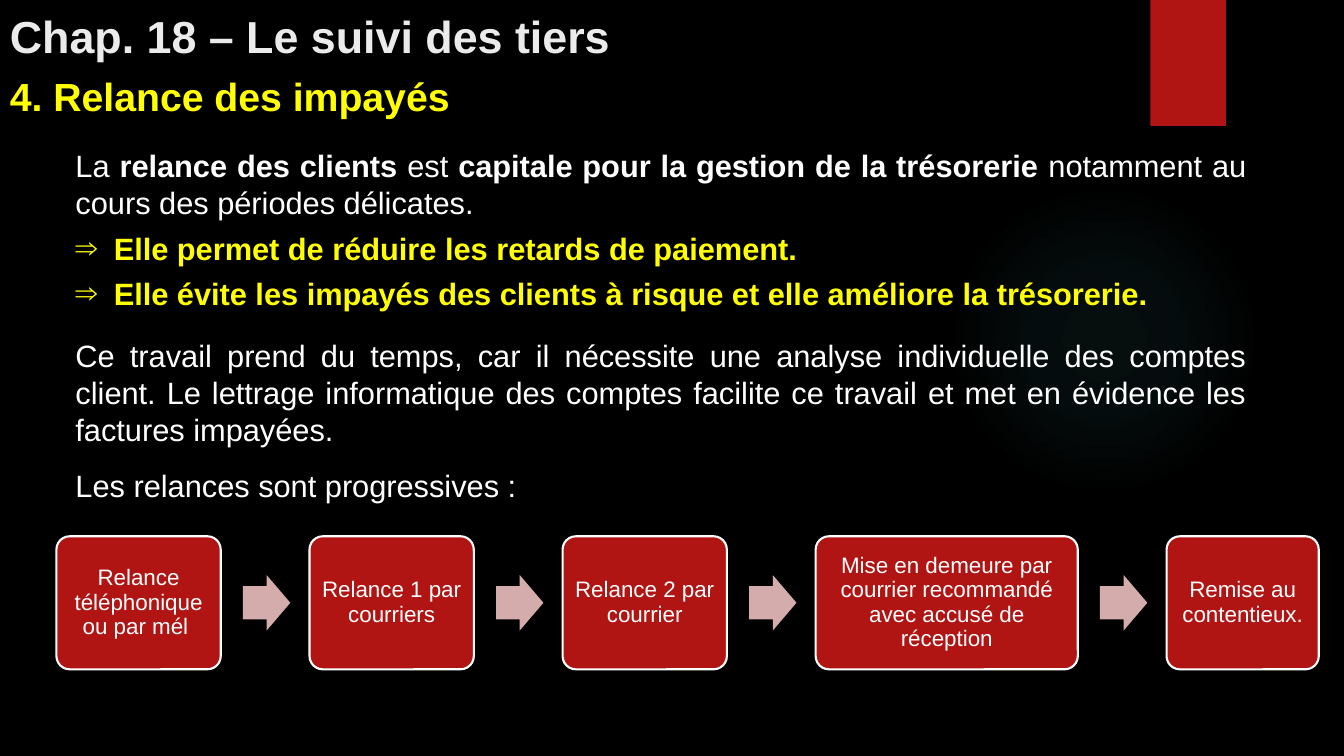
from pptx import Presentation
from pptx.dml.color import RGBColor
from pptx.enum.shapes import MSO_SHAPE
from pptx.enum.text import MSO_ANCHOR, PP_ALIGN
from pptx.oxml import parse_xml
from pptx.oxml.ns import nsdecls
from pptx.util import Inches, Pt

RECT, OVAL = MSO_SHAPE.RECTANGLE, MSO_SHAPE.OVAL
ROUNDED, ARROW = MSO_SHAPE.ROUNDED_RECTANGLE, MSO_SHAPE.RIGHT_ARROW
TOP, MIDDLE, BOTTOM = MSO_ANCHOR.TOP, MSO_ANCHOR.MIDDLE, MSO_ANCHOR.BOTTOM
LEFT, CENTER, JUSTIFY = PP_ALIGN.LEFT, PP_ALIGN.CENTER, PP_ALIGN.JUSTIFY

BLACK, WHITE, PALE = "000000", "FFFFFF", "EBEBEB"
YELLOW, RED, PINK, TEAL = "FFFF00", "B01513", "D4ACAB", "50B9C1"
FONT = "Arial"

CHAPTER = "Chap. 18 – Le suivi des tiers"
SECTION = "4. Relance des impayés"
# runs, colour, bulleted, space before, space after
BODY = [
    ([("La ", False), ("relance des clients", True), (" est ", False),
      ("capitale pour la gestion de la trésorerie", True),
      (" notamment au cours des périodes délicates.", False)], WHITE, False, 0, 0),
    ([("Elle permet de réduire les retards de paiement.", True)], YELLOW, True, 6, 0),
    ([("Elle évite les impayés des clients à risque et elle améliore la trésorerie.", True)],
     YELLOW, True, 6, 0),
    ([("Ce travail prend du temps, car il nécessite une analyse individuelle des comptes "
       "client. Le lettrage informatique des comptes facilite ce travail et met en évidence "
       "les factures impayées.", False)], WHITE, False, 18, 7.5),
    ([("Les relances sont progressives :", False)], WHITE, False, 6, 7.5),
]
STEPS = [
    ("Relance téléphonique ou par mél ", 1.63),
    ("Relance 1 par courriers", 1.63),
    ("Relance 2 par courrier", 1.63),
    ("Mise en demeure par courrier recommandé avec accusé de réception", 2.6),
    ("Remise au contentieux.", 1.51),
]
STEPS_LEFT, STEPS_TOP, STEP_HEIGHT, STEP_GAP = 0.56, 5.32, 1.32, 0.88
ARROW_WIDTH, ARROW_HEIGHT, ARROW_OFFSET = 0.47, 0.55, 0.22
GLOW_STOPS = [(0, 7), (36, 6), (69, 0)]

deck = Presentation()
deck.slide_width, deck.slide_height = Inches(13.33), Inches(7.5)
slide = deck.slides.add_slide(deck.slide_layouts[6])


def color(value):
    return RGBColor.from_string(value)


slide.background.fill.solid()
slide.background.fill.fore_color.rgb = color(BLACK)


def add_block(kind, left, top, width, height, fill):
    block = slide.shapes.add_shape(kind, *map(Inches, (left, top, width, height)))
    block.shadow.inherit = False
    block.fill.solid()
    block.fill.fore_color.rgb = color(fill)
    block.line.fill.background()
    return block


def add_text(left, top, width, height, anchor=TOP):
    frame = slide.shapes.add_textbox(*map(Inches, (left, top, width, height))).text_frame
    frame.word_wrap = True
    frame.vertical_anchor = anchor
    return frame


def style(run, size, fill, bold=False):
    run.font.name, run.font.size, run.font.bold = FONT, Pt(size), bold
    run.font.color.rgb = color(fill)


def add_bullet(paragraph):
    properties = paragraph._p.get_or_add_pPr()
    properties.set("marL", str(Inches(0.38)))
    properties.set("indent", str(-Inches(0.38)))
    for tag in (f'<a:buFont {nsdecls("a")} typeface="{FONT}"/>',
                f'<a:buChar {nsdecls("a")} char="⇒"/>'):
        properties.append(parse_xml(tag))


glow = add_block(OVAL, 9.41, 1.83, 3.08, 3.08, TEAL)
stops = "".join(
    f'<a:gs pos="{place * 1000}"><a:srgbClr val="{TEAL}"><a:alpha val="{alpha * 1000}"/>'
    "</a:srgbClr></a:gs>" for place, alpha in GLOW_STOPS)
solid = glow._element.spPr.find("{*}solidFill")
solid.getparent().replace(solid, parse_xml(
    f'<a:gradFill {nsdecls("a")}><a:gsLst>{stops}</a:gsLst><a:path path="circle">'
    '<a:fillToRect l="50000" t="50000" r="50000" b="50000"/></a:path></a:gradFill>'))
add_block(RECT, 11.41, 0, 0.75, 1.25, RED)

for heading, box, anchor, size, fill in (
        (CHAPTER, (0, 0, 11.34, 0.67), BOTTOM, 32, PALE),
        (SECTION, (0, 0.67, 9.08, 0.57), TOP, 28, YELLOW)):
    frame = add_text(*box, anchor)
    frame.text = heading
    frame.paragraphs[0].alignment = LEFT
    style(frame.paragraphs[0].runs[0], size, fill, True)

body = add_text(0.65, 1.41, 11.81, 3.68)
for index, (parts, fill, bulleted, before, after) in enumerate(BODY):
    paragraph = body.add_paragraph() if index else body.paragraphs[0]
    if bulleted:
        add_bullet(paragraph)
    paragraph.alignment = JUSTIFY
    paragraph.space_before, paragraph.space_after = Pt(before), Pt(after)
    for words, bold in parts:
        run = paragraph.add_run()
        run.text = words
        style(run, 22, fill, bold)

left = STEPS_LEFT
for index, (label, width) in enumerate(STEPS):
    if index:
        arrow = add_block(ARROW, left - STEP_GAP + ARROW_OFFSET,
                          STEPS_TOP + (STEP_HEIGHT - ARROW_HEIGHT) / 2,
                          ARROW_WIDTH, ARROW_HEIGHT, PINK)
        arrow.adjustments[0], arrow.adjustments[1] = 0.6, 0.5
    step = add_block(ROUNDED, left, STEPS_TOP, width, STEP_HEIGHT, RED)
    step.adjustments[0] = 0.1
    step.line.color.rgb = color(WHITE)
    step.line.width = Pt(1.5)
    frame = step.text_frame
    frame.word_wrap = True
    frame.vertical_anchor = MIDDLE
    frame.margin_left = frame.margin_right = Inches(0.07)
    frame.margin_top = frame.margin_bottom = Inches(0.07)
    frame.text = label
    paragraph = frame.paragraphs[0]
    paragraph.alignment, paragraph.line_spacing = CENTER, 0.9
    style(paragraph.runs[0], 16, WHITE)
    left += width + STEP_GAP

deck.save("out.pptx")
